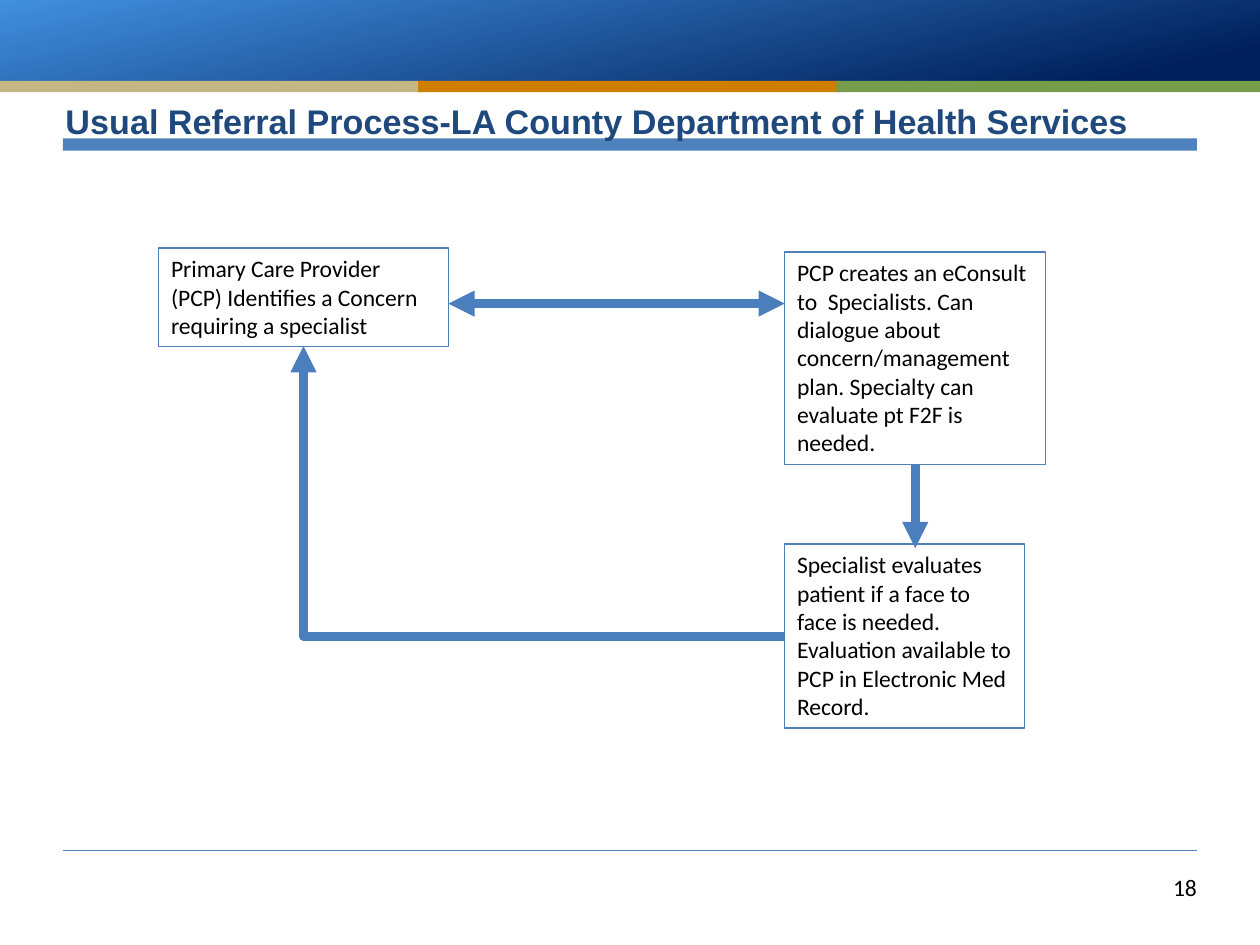
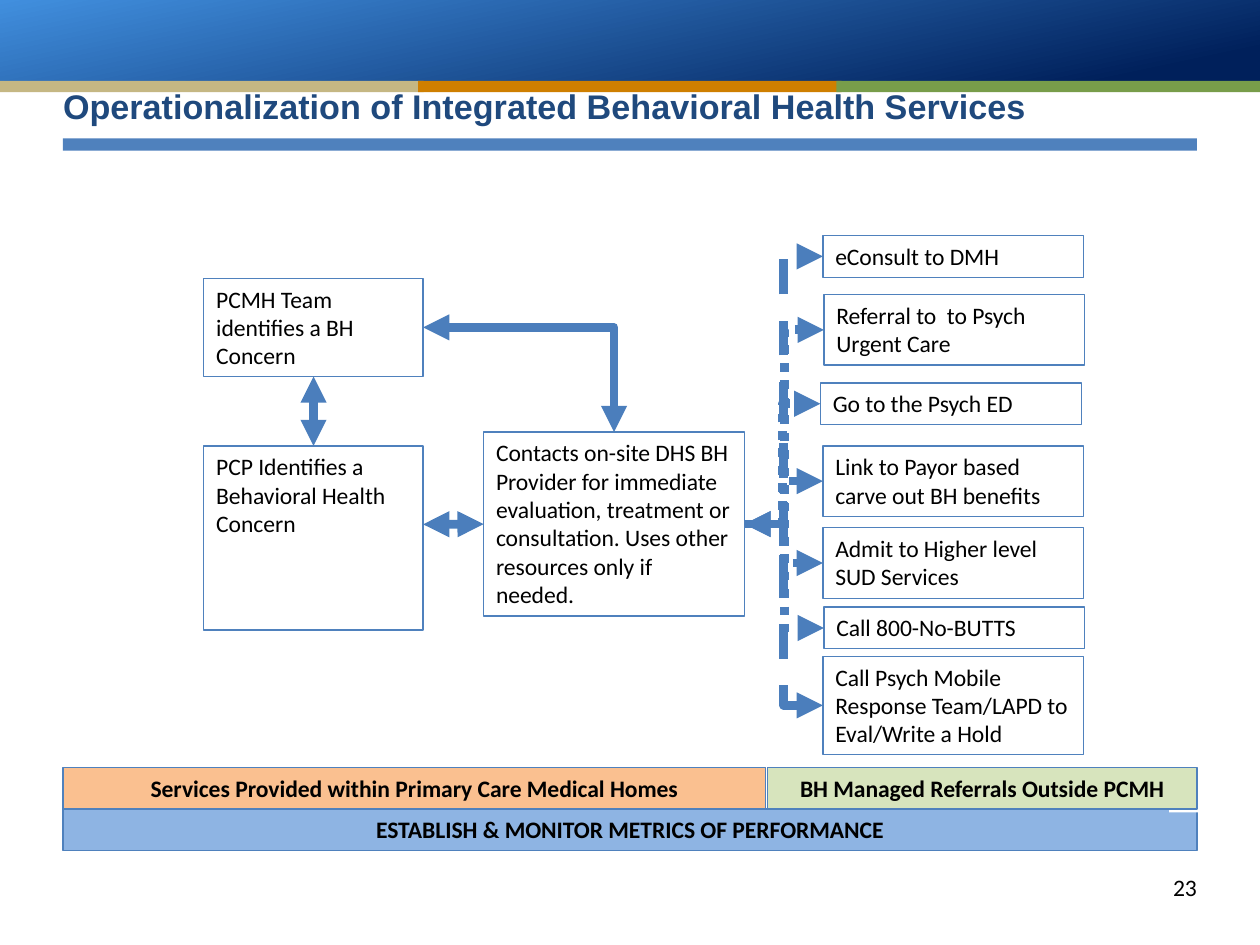
from pptx import Presentation
from pptx.dml.color import RGBColor
from pptx.enum.dml import MSO_LINE as Dash
from pptx.enum.shapes import MSO_CONNECTOR as Link, MSO_SHAPE as Preset
from pptx.enum.text import MSO_ANCHOR as Anchor, MSO_AUTO_SIZE as Fit, PP_ALIGN as Align
from pptx.oxml.ns import qn
from pptx.util import Cm, Pt
from lxml.etree import SubElement

BLUE, ARROW_BLUE, NAVY, SKY = "4F81BD", "4B7EBC", "00205B", "418FDE"
STRIPES = ["C5B783", "CF7F00", "789D4A"]
MARGIN, CONTENT_WIDTH = 1.27, 22.86
TOP, LEFT, BOTTOM, RIGHT = range(4)
BODY_FONT = {"name": "Calibri", "size": Pt(13.5), "bold": False}
BAR_FONT = {**BODY_FONT, "bold": True}
TITLE_FONT = {"name": "Arial", "size": Pt(19.5), "bold": True}
NO_INSETS = {f"margin_{side}": 0 for side in ("left", "top", "right", "bottom")}


def rgb(hex_color):
    return RGBColor.from_string(hex_color)


def apply_format(target, values):
    for name, value in values.items():
        setattr(target, name, value)


def side_middle(box, side):
    """Return the middle of one side of a box, in EMU."""
    across = {LEFT: 0, RIGHT: box.width}.get(side, box.width // 2)
    down = {TOP: 0, BOTTOM: box.height}.get(side, box.height // 2)
    return box.left + across, box.top + down


class SlideBuilder:
    """Holds the shared style and the slide being drawn."""

    def __init__(self):
        self.deck = Presentation()
        self.deck.slide_width, self.deck.slide_height = Cm(25.4), Cm(19.05)
        self.page = None

    def new_page(self, title, title_place, number):
        self.page = self.deck.slides.add_slide(self.deck.slide_layouts[5])
        self.frame(number)
        self.title(title, title_place)

    def frame(self, number):
        header = self.rect((0, 0, 25.4, 1.63), NAVY)
        header.fill.gradient()
        header.fill.gradient_angle = 102
        stops = zip(header.fill.gradient_stops, (0.09, 1), (NAVY, SKY))
        for stop, position, color in stops:
            stop.position = position
            stop.color.rgb = rgb(color)
        for index, color in enumerate(STRIPES):
            self.rect((index * 8.43, 1.63, 8.54, 0.23), color)
        self.rect((MARGIN, 2.79, CONTENT_WIDTH, 0.25), BLUE)
        self.connector((Cm(MARGIN), Cm(17.15)),
                       (Cm(MARGIN + CONTENT_WIDTH), Cm(17.15)), BLUE, 0.5)
        place = [Cm(value) for value in (19.71, 17.6, 4.42, 0.58)]
        page_number = self.page.shapes.add_textbox(*place)
        self.put_text(page_number, number, BODY_FONT, align=Align.RIGHT, **NO_INSETS)

    def title(self, text, place):
        title = self.page.shapes.title
        title.element.getparent().append(title.element)
        names = ("left", "top", "width", "height")
        apply_format(title, dict(zip(names, map(Cm, place))))
        self.put_text(title, text, TITLE_FONT, "1F497D",
                      vertical_anchor=Anchor.MIDDLE, **NO_INSETS)

    def put_text(self, shape, text, font, color="000000", align=Align.LEFT, **frame_format):
        frame = shape.text_frame
        apply_format(frame, {"word_wrap": True, "auto_size": Fit.NONE,
                             "vertical_anchor": Anchor.TOP, **frame_format})
        para = frame.paragraphs[0]
        para.alignment = align
        span = para.add_run()
        span.text = text
        apply_format(span.font, font)
        span.font.color.rgb = rgb(color)

    def rect(self, place, fill=None, outline=None):
        box = self.page.shapes.add_shape(Preset.RECTANGLE, *map(Cm, place))
        box.shadow.inherit = False
        if fill:
            box.fill.solid()
            box.fill.fore_color.rgb = rgb(fill)
        else:
            box.fill.background()
        if outline:
            box.line.color.rgb = rgb(outline)
            box.line.width = Pt(0.75)
        else:
            box.line.fill.background()
        return box

    def step(self, text, place):
        box = self.rect(place, outline=BLUE)
        self.put_text(box, text, BODY_FONT)
        return box

    def bar(self, text, place, fill):
        self.put_text(self.rect(place, fill, BLUE), text, BAR_FONT, align=Align.CENTER)

    def connector(self, start, end, color, width, kind=Link.STRAIGHT, dash=None, heads=()):
        line = self.page.shapes.add_connector(kind, *start, *end)
        line.line.color.rgb = rgb(color)
        line.line.width = Pt(width)
        if dash:
            line.line.dash_style = dash
        properties = line.element.spPr
        for head in heads:
            SubElement(properties.find(qn("a:ln")), qn(f"a:{head}")).set("type", "triangle")
        SubElement(properties, qn("a:effectLst"))
        return line

    def arrow(self, start, end, both=False, kind=Link.STRAIGHT, dash=None, one_bend=False):
        """Draw an arrow; each end is (box, side) or a point in centimetres."""
        joined = [not isinstance(place[0], (int, float)) for place in (start, end)]
        points = [side_middle(*place) if is_joined else [Cm(value) for value in place]
                  for place, is_joined in zip((start, end), joined)]
        heads = ("headEnd", "tailEnd") if both else ("tailEnd",)
        line = self.connector(*points, ARROW_BLUE, 5, kind, dash, heads)
        if one_bend:
            line.element.spPr.find(qn("a:prstGeom")).set("prst", "bentConnector2")
        if joined[0]:
            line.begin_connect(*start)
        if joined[1]:
            line.end_connect(*end)


def referral_page(builder):
    builder.new_page("Usual Referral Process-LA County Department of Health Services",
                     (1.32, 1.73, CONTENT_WIDTH, 1.4), "18")
    concern = builder.step(
        "Primary Care Provider (PCP) Identifies a Concern requiring a specialist",
        (3.2, 5, 5.84, 1.98))
    consult = builder.step(
        "PCP creates an eConsult to  Specialists. Can dialogue about "
        "concern/management plan. Specialty can evaluate pt F2F is needed.",
        (15.82, 5.08, 5.26, 4.29))
    builder.arrow((9.04, 6.12), (15.82, 6.12), both=True)
    evaluation = builder.step(
        "Specialist evaluates patient if a face to face is needed. "
        "Evaluation available to PCP in Electronic Med Record.",
        (15.82, 10.97, 4.83, 3.71))
    builder.arrow((consult, BOTTOM), (18.45, 11.05))
    builder.arrow((evaluation, LEFT), (concern, BOTTOM), kind=Link.ELBOW, one_bend=True)


def behavioral_health_page(builder):
    builder.new_page("Operationalization of Integrated Behavioral Health Services",
                     (MARGIN, 1.52, CONTENT_WIDTH, 1.24), "23")
    provider = builder.step("PCP Identifies a Behavioral Health Concern",
                            (4.11, 8.99, 4.42, 3.71))
    contact = builder.step(
        "Contacts on-site DHS BH Provider for immediate evaluation, treatment or "
        "consultation. Uses other resources only if needed.",
        (9.75, 8.71, 5.26, 3.71))
    team = builder.step("PCMH Team identifies a BH Concern", (4.11, 5.61, 4.42, 1.98))
    builder.arrow((8.53, 10.57), (contact, LEFT), both=True)
    builder.arrow((team, BOTTOM), (provider, TOP), both=True)
    builder.arrow((team, RIGHT), (contact, TOP), both=True, kind=Link.ELBOW, one_bend=True)

    one_line, two_lines, three_lines = 0.84, 1.42, 1.98
    referrals = [
        ("eConsult to DMH", 16.59, 4.75, one_line),
        ("Referral to  to Psych Urgent Care", 16.61, 5.94, two_lines),
        ("Go to the Psych ED", 16.54, 7.72, one_line),
        ("Link to Payor based carve out BH benefits", 16.59, 8.99, two_lines),
        ("Admit to Higher level SUD Services", 16.59, 10.64, two_lines),
        ("Call 800-No-BUTTS", 16.61, 12.24, one_line),
        ("Call Psych Mobile Response Team/LAPD to Eval/Write a Hold",
         16.59, 13.23, three_lines),
    ]
    first, *middle, last = [builder.step(text, (left, top, 5.26, height))
                            for text, left, top, height in referrals]
    two_way = {"both": True, "kind": Link.ELBOW, "dash": Dash.DASH}
    builder.arrow((contact, RIGHT), (first, LEFT), **two_way)
    for referral in middle:
        builder.arrow((contact, RIGHT), (referral, LEFT),
                      kind=Link.ELBOW, dash=Dash.ROUND_DOT)
    builder.arrow((last, LEFT), (contact, RIGHT), **two_way)

    builder.bar("ESTABLISH & MONITOR METRICS OF PERFORMANCE",
                (MARGIN, 16.31, CONTENT_WIDTH, one_line), "8EB4E3")
    builder.rect((23.57, 15.54, 0.86, 0.84), "FFFFFF")
    builder.bar("Services Provided within Primary Care Medical Homes",
                (MARGIN, 15.47, 14.17, one_line), "FAC090")
    builder.bar("BH Managed Referrals Outside PCMH",
                (15.47, 15.47, 8.66, one_line), "D7E4BD")


def main():
    builder = SlideBuilder()
    referral_page(builder)
    behavioral_health_page(builder)
    builder.deck.save("out.pptx")


if __name__ == "__main__":
    main()
